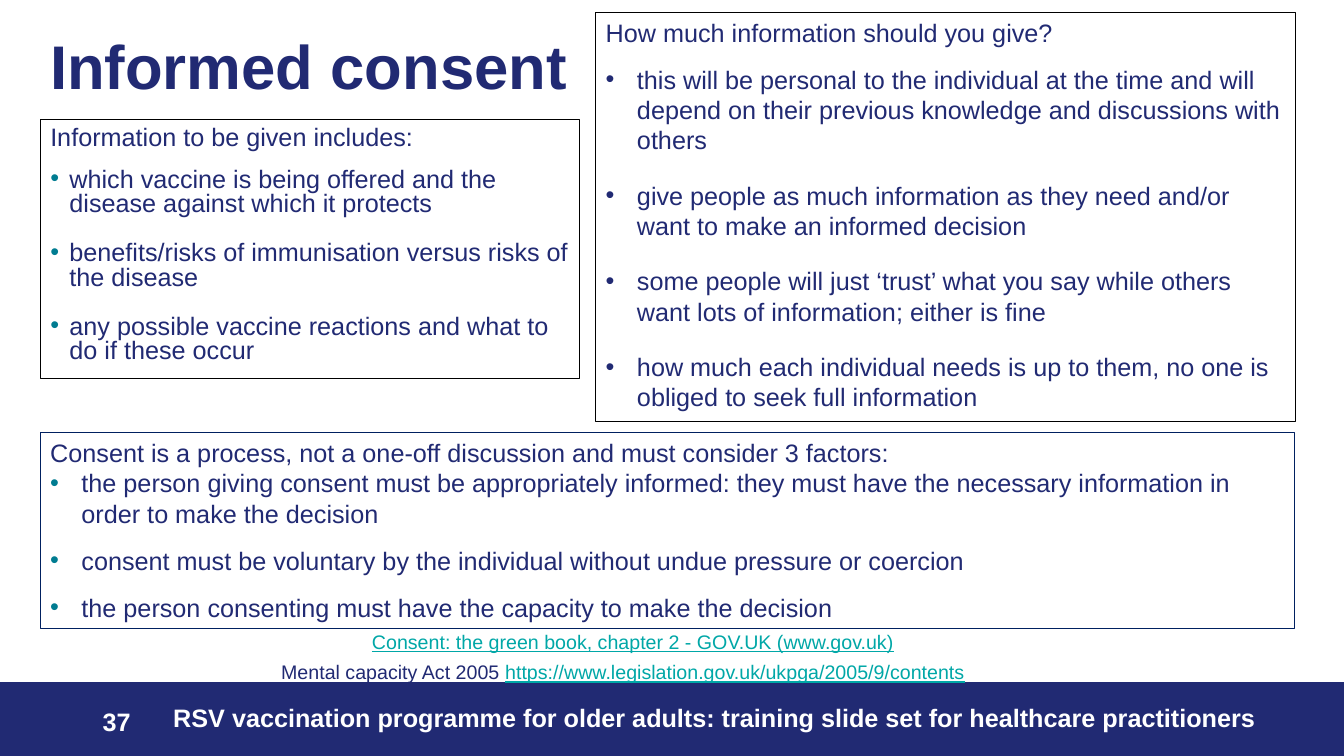
from lxml import etree
from pptx import Presentation
from pptx.dml.color import RGBColor
from pptx.enum import shapes, text
from pptx.oxml import ns
from pptx.util import Inches, Pt

NAVY, TEAL, LINK, WHITE = "212A73", "007C91", "00A7A7", "FFFFFF"


def rgb(value):
    return RGBColor.from_string(value)


def add_text(shape, paragraphs, anchor=text.MSO_ANCHOR.TOP):
    """Each paragraph is (runs, format, bullet); each run is (words, font values)."""
    frame = shape.text_frame
    frame.word_wrap = True
    frame.vertical_anchor = anchor
    for index, (runs, layout, bullet) in enumerate(paragraphs):
        para = frame.add_paragraph() if index else frame.paragraphs[0]
        for key, value in ({"alignment": text.PP_ALIGN.LEFT} | layout).items():
            setattr(para, key, value)
        for words, look in runs:
            run = para.add_run()
            run.text = words
            values = {"name": "Arial", "size": Pt(18), "color": NAVY} | look
            run.font.color.rgb = rgb(values.pop("color"))
            for key, value in values.items():
                setattr(run.font, key, value)
        if bullet:
            indent, colour = bullet
            props = para._p.get_or_add_pPr()
            props.set("marL", str(Inches(indent)))
            props.set("indent", str(-Inches(indent)))
            tint = etree.SubElement(props, ns.qn("a:buClr"))
            etree.SubElement(tint, ns.qn("a:srgbClr"), val=colour)
            etree.SubElement(props, ns.qn("a:buFont"), typeface="Arial")
            etree.SubElement(props, ns.qn("a:buChar"), char="•")


deck = Presentation()
deck.slide_width, deck.slide_height = Inches(13.33), Inches(7.5)
slide = deck.slides.add_slide(deck.slide_layouts[6])

# Footer band
band = slide.shapes.add_shape(shapes.MSO_SHAPE.RECTANGLE, Inches(0), Inches(6.77),
                              Inches(13.33), Inches(0.73))
band.shadow.inherit = False
band.fill.solid()
band.fill.fore_color.rgb = rgb(NAVY)
band.line.color.rgb = rgb(NAVY)
band.line.width = Pt(1)

# Title
title = slide.shapes.add_textbox(Inches(0.4), Inches(0.29), Inches(11.5), Inches(0.8))
add_text(title, [([("Informed consent", {"size": Pt(44), "bold": True})],
                  {"line_spacing": 0.9}, None)], text.MSO_ANCHOR.MIDDLE)

# Outlined boxes: place, outline, bullet, heading format, item format, heading, items
wide_gap = {"space_before": Pt(12), "space_after": Pt(6)}
boxes = [
    ((0.4, 1.19, 5.35, 2.57), "000000", (0.19, TEAL),
     {"line_spacing": 0.9, "space_before": Pt(10)}, wide_gap | {"line_spacing": 0.8},
     "Information to be given includes:",
     ["which vaccine is being offered and the disease against which it protects",
      "benefits/risks of immunisation versus risks of the disease",
      "any possible vaccine reactions and what to do if these occur"]),
    ((5.91, 0.12, 6.94, 4.06), "000000", (0.31, NAVY), {}, wide_gap,
     "How much information should you give?",
     ["this will be personal to the individual at the time and will depend on their "
      "previous knowledge and discussions with others",
      "give people as much information as they need and/or want to make an informed decision",
      "some people will just ‘trust’ what you say while others want lots of information; "
      "either is fine",
      "how much each individual needs is up to them, no one is obliged to seek full "
      "information"]),
    ((0.4, 4.29, 12.44, 1.95), "002060", (0.31, TEAL), {}, {"space_before": Pt(12)},
     "Consent is a process, not a one-off discussion and must consider 3 factors:",
     ["the person giving consent must be appropriately informed: they must have the "
      "necessary information in order to make the decision",
      "consent must be voluntary by the individual without undue pressure or coercion",
      "the person consenting must have the capacity to make the decision"]),
]
for place, outline, bullet, heading_format, item_format, heading, items in boxes:
    box = slide.shapes.add_textbox(*map(Inches, place))
    box.line.color.rgb = rgb(outline)
    box.line.width = Pt(0.75)
    paragraphs = [([(heading, {})], heading_format, None)]
    paragraphs += [([(item, {})], item_format, bullet) for item in items]
    # The first consent factor follows its heading without a gap
    if outline == "002060":
        paragraphs[1] = (paragraphs[1][0], {}, bullet)
    add_text(box, paragraphs)

# Page number, footer and sources
footer_look = {"color": WHITE, "bold": True}
link_look = {"size": Pt(14), "color": LINK, "underline": True}
single_lines = [
    ((0.92, 6.96, 3, 0.4), [("37", footer_look)]),
    ((1.62, 6.92, 11.03, 0.49),
     [("RSV vaccination programme for older adults: training slide set for healthcare "
       "practitioners", footer_look)]),
    ((3.59, 6.2, 6.85, 0.34),
     [("Consent: the green book, chapter 2 - GOV.UK (www.gov.uk)", link_look)]),
    ((2.69, 6.5, 11.42, 0.81),
     [("Mental capacity Act 2005 ", {"size": Pt(14)}),
      ("https://www.legislation.gov.uk/ukpga/2005/9/contents", link_look)]),
]
for place, runs in single_lines:
    add_text(slide.shapes.add_textbox(*map(Inches, place)), [(runs, {}, None)])

deck.save("out.pptx")
